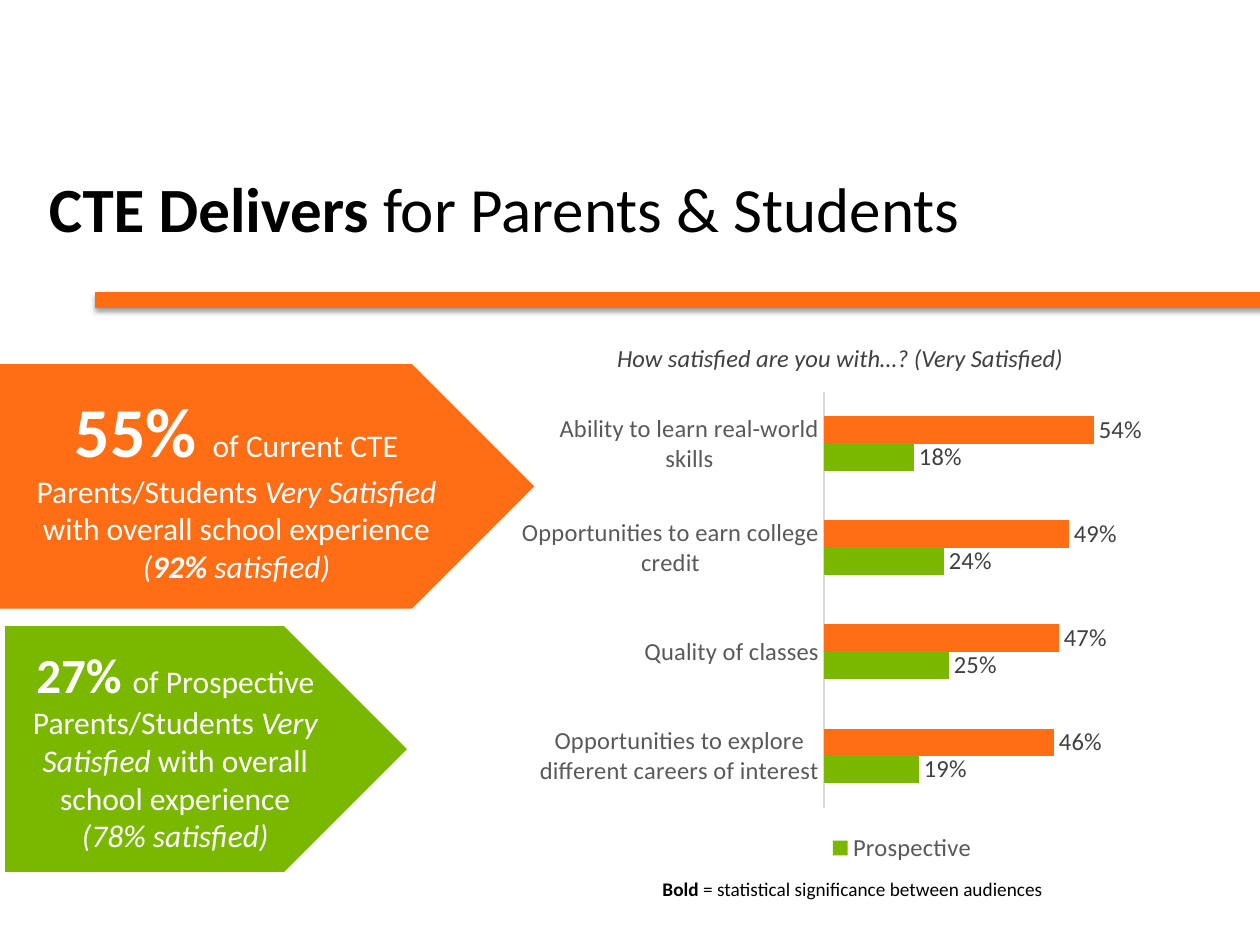
from dataclasses import dataclass

from lxml import etree
from pptx import Presentation
from pptx.chart.data import CategoryChartData
from pptx.dml.color import RGBColor
from pptx.enum.chart import XL_CHART_TYPE, XL_LABEL_POSITION, XL_LEGEND_POSITION, XL_TICK_MARK
from pptx.enum.shapes import MSO_CONNECTOR, MSO_SHAPE
from pptx.enum.text import MSO_ANCHOR, PP_ALIGN
from pptx.oxml import parse_xml
from pptx.oxml.ns import nsdecls, qn
from pptx.util import Inches, Pt

ORANGE = RGBColor(0xFF, 0x6D, 0x14)
RULE_ORANGE = RGBColor(0xFF, 0x6D, 0x13)
GREEN = RGBColor(0x7A, 0xB8, 0x00)
WHITE = RGBColor(0xFF, 0xFF, 0xFF)
BLACK = RGBColor(0, 0, 0)
DARK_GRAY = RGBColor(0x40, 0x40, 0x40)
GRAY = RGBColor(0x59, 0x59, 0x59)
LIGHT_GRAY = RGBColor(0xD9, 0xD9, 0xD9)
FONT = "Calibri"


@dataclass
class Run:
    text: str
    bold: bool = False
    italic: bool = False
    size: float | None = None


@dataclass
class Callout:
    box: tuple[float, float, float, float]
    color: RGBColor
    paragraphs: list[list[Run]]


SATISFIED = [Run("Very Satisfied ", italic=True), Run("with overall school experience")]
CALLOUTS = [
    Callout((0, 2.89, 4.24, 1.94), ORANGE, [
        [Run("55% ", bold=True, size=40), Run("of Current CTE Parents/Students "), *SATISFIED],
        [Run("(", italic=True), Run("92% ", bold=True, italic=True), Run("satisfied)", italic=True)],
    ]),
    Callout((0.04, 4.97, 3.19, 1.95), GREEN, [
        [Run("27% ", bold=True, size=28), Run("of Prospective Parents/Students "), *SATISFIED],
        [Run("(78% satisfied)", italic=True)],
    ]),
]
SATISFACTION = {
    "Opportunities to explore different careers of interest": (0.19, 0.46),
    "Quality of classes": (0.25, 0.47),
    "Opportunities to earn college credit": (0.24, 0.49),
    "Ability to learn real-world skills": (0.18, 0.54),
}
AUDIENCES = {"Prospective": GREEN, "Current": ORANGE}


def style_font(font, size: float, color: RGBColor) -> None:
    font.name = FONT
    font.size = Pt(size)
    font.color.rgb = color


def write_paragraph(paragraph, runs: list[Run], size: float, color: RGBColor) -> None:
    style_font(paragraph.font, size, color)
    for part in runs:
        run = paragraph.add_run()
        run.text = part.text
        run.font.bold = part.bold
        run.font.italic = part.italic
        if part.size:
            run.font.size = Pt(part.size)


def add_text(slide, box, runs: list[Run], size: float, color: RGBColor, wrap: bool = True):
    frame = slide.shapes.add_textbox(*map(Inches, box)).text_frame
    frame.word_wrap = wrap
    write_paragraph(frame.paragraphs[0], runs, size, color)
    return frame


def add_callout(slide, callout: Callout) -> None:
    arrow = slide.shapes.add_shape(MSO_SHAPE.PENTAGON, *map(Inches, callout.box))
    arrow.shadow.inherit = False
    arrow.fill.solid()
    arrow.fill.fore_color.rgb = callout.color
    arrow.line.fill.background()
    frame = arrow.text_frame
    frame.word_wrap = True
    frame.vertical_anchor = MSO_ANCHOR.MIDDLE
    for index, runs in enumerate(callout.paragraphs):
        paragraph = frame.add_paragraph() if index else frame.paragraphs[0]
        paragraph.alignment = PP_ALIGN.CENTER
        write_paragraph(paragraph, runs, 18, WHITE)


def add_rule(slide) -> None:
    rule = slide.shapes.add_connector(
        MSO_CONNECTOR.STRAIGHT, Inches(0.75), Inches(2.38), Inches(10.1), Inches(2.38))
    rule.line.color.rgb = RULE_ORANGE
    rule.line.width = Pt(9)
    properties = rule.element.find(qn("p:spPr"))
    properties.append(parse_xml(
        f'<a:effectLst {nsdecls("a")}>'
        f'<a:outerShdw blurRad="{Pt(3.1)}" dist="{Pt(1.6)}" dir="5400000" rotWithShape="0">'
        '<a:srgbClr val="000000"><a:alpha val="38000"/></a:srgbClr>'
        '</a:outerShdw></a:effectLst>'))


def manual_layout(inner: bool = False, **fractions: float):
    """Build a chart layout from x, y, w and h as fractions of the chart."""
    layout = parse_xml(f'<c:layout {nsdecls("c")}><c:manualLayout/></c:layout>')
    settings = {"layoutTarget": "inner"} if inner else {}
    settings |= {"xMode": "edge", "yMode": "edge", **fractions}
    for tag, value in settings.items():
        etree.SubElement(layout[0], qn(f"c:{tag}")).set("val", str(value))
    return layout


def add_satisfaction_chart(slide) -> None:
    data = CategoryChartData(number_format="0%")
    data.categories = list(SATISFACTION)
    for name, values in zip(AUDIENCES, zip(*SATISFACTION.values())):
        data.add_series(name, values)
    chart = slide.shapes.add_chart(
        XL_CHART_TYPE.BAR_CLUSTERED, Inches(4.11), Inches(2.95), Inches(4.96), Inches(3.98),
        data).chart
    style_font(chart.font, 14, BLACK)
    chart.has_title = False

    category_axis = chart.category_axis
    category_axis.major_tick_mark = XL_TICK_MARK.NONE
    category_axis.format.line.color.rgb = LIGHT_GRAY
    category_axis.format.line.width = Pt(0.75)
    style_font(category_axis.tick_labels.font, 14, GRAY)
    value_axis = chart.value_axis
    value_axis.visible = False
    value_axis.has_major_gridlines = False
    value_axis.minimum_scale = 0
    value_axis.maximum_scale = 0.6

    plot = chart.plots[0]
    plot.gap_width = 182
    plot.overlap = 0
    plot.vary_by_categories = False
    for series, color in zip(plot.series, AUDIENCES.values()):
        series.format.fill.solid()
        series.format.fill.fore_color.rgb = color
        labels = series.data_labels
        labels.show_value = True
        labels.number_format = "0%"
        labels.number_format_is_linked = False
        labels.position = XL_LABEL_POSITION.OUTSIDE_END
        style_font(labels.font, 14, DARK_GRAY)

    chart.has_legend = True
    legend = chart.legend
    legend.position = XL_LEGEND_POSITION.BOTTOM
    legend.include_in_layout = False
    style_font(legend.font, 14, GRAY)
    legend_xml = chart.element.find(f'.//{qn("c:legend")}')
    for old_layout in legend_xml.findall(qn("c:layout")):
        legend_xml.remove(old_layout)
    hidden_prospective = parse_xml(
        f'<c:legendEntry {nsdecls("c")}><c:idx val="0"/><c:delete val="1"/></c:legendEntry>')
    legend_xml.find(qn("c:legendPos")).addnext(hidden_prospective)
    hidden_prospective.addnext(manual_layout(x=0.5, y=0.91, w=0.23, h=0.08))

    plot_area = chart.element.find(f'.//{qn("c:plotArea")}')
    for old_layout in plot_area.findall(qn("c:layout")):
        plot_area.remove(old_layout)
    plot_area.insert(0, manual_layout(inner=True, x=0.49, y=0.04, w=0.48, h=0.83))


def main() -> None:
    deck = Presentation()
    deck.slide_width, deck.slide_height = Inches(10), Inches(7.5)
    slide = deck.slides.add_slide(deck.slide_layouts[6])
    add_rule(slide)
    title = add_text(slide, (0.29, 1.04, 8.55, 1.25),
                     [Run("CTE Delivers ", bold=True), Run("for Parents & Students")], 36, BLACK)
    title.vertical_anchor = MSO_ANCHOR.MIDDLE
    title.paragraphs[0].line_spacing = Pt(40)
    add_satisfaction_chart(slide)
    for callout in CALLOUTS:
        add_callout(slide, callout)
    add_text(slide, (4.8, 2.67, 4.17, 0.34),
             [Run("How satisfied are you with…? (Very Satisfied)", italic=True)],
             14, DARK_GRAY, wrap=False)
    add_text(slide, (5.16, 6.91, 3.47, 0.47),
             [Run("Bold", bold=True), Run(" = statistical significance between audiences")],
             11, BLACK)
    deck.save("out.pptx")


if __name__ == "__main__":
    main()
